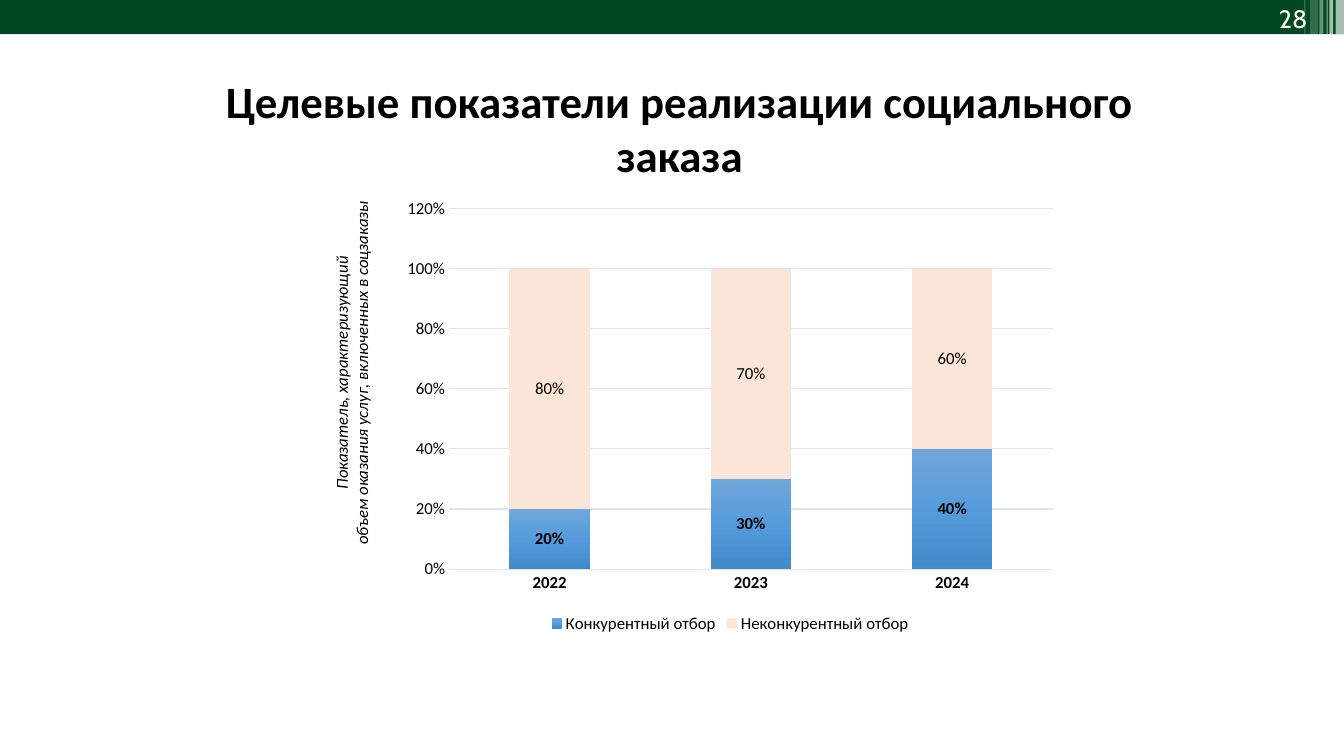
from copy import deepcopy
from dataclasses import dataclass

from pptx import Presentation
from pptx.chart.data import CategoryChartData
from pptx.dml.color import RGBColor
from pptx.enum.chart import XL_CHART_TYPE as ChartType
from pptx.enum.chart import XL_LABEL_POSITION as LabelPos
from pptx.enum.chart import XL_LEGEND_POSITION as LegendPos
from pptx.enum.chart import XL_TICK_MARK as Tick
from pptx.enum.shapes import MSO_SHAPE as Shape
from pptx.enum.text import MSO_ANCHOR as Anchor
from pptx.enum.text import PP_ALIGN as Align
from pptx.oxml.ns import qn
from pptx.util import Cm, Pt


@dataclass(frozen=True)
class Theme:
    green: str = "004821"
    white: str = "FFFFFF"
    black: str = "000000"
    grid: str = "E0E5EB"
    competitive: tuple = ("71A6DB", "559BDB", "448ACA")
    noncompetitive: str = "FBE5D6"
    font: str = "Calibri"
    number_font: str = "Cabin"
    title: int = 32
    number: int = 18
    body: int = 12


THEME = Theme()
SLIDE_W, SLIDE_H, BAR_H = 33.87, 19.05, 0.86
STRIPES = [
    (33.66, 0.21, 0.86, 65),
    (33.5, 0.1, 0.86, 65),
    (33.43, 0.03, 0.86, 60),
    (33.25, 0.1, 0.86, 40),
    (33.02, 0.2, 0.91, 20),
    (32.87, 0.03, 0.91, 30),
]


def rgb(color):
    return RGBColor.from_string(color)


def style_font(font, size=THEME.body, color=THEME.black, name=THEME.font,
               bold=False, italic=False):
    font.size = Pt(size)
    font.color.rgb = rgb(color)
    font.name = name
    font.bold = bold
    font.italic = italic


def add_rect(slide, left, width, height, color, opacity=100):
    sp = slide.shapes.add_shape(Shape.RECTANGLE, Cm(left), 0, Cm(width), Cm(height))
    sp.shadow.inherit = False
    sp.line.fill.background()
    sp.fill.solid()
    sp.fill.fore_color.rgb = rgb(color)
    if opacity < 100:
        clr = sp.fill._xPr.find(qn("a:solidFill"))[0]
        alpha = clr.makeelement(qn("a:alpha"), {"val": str(opacity * 1000)})
        clr.append(alpha)


def add_text(slide, text, left, top, width, height, align=Align.CENTER,
             anchor=Anchor.TOP, rotation=0, **font):
    sp = slide.shapes.add_textbox(Cm(left), Cm(top), Cm(width), Cm(height))
    sp.rotation = rotation
    tf = sp.text_frame
    tf.word_wrap = True
    tf.vertical_anchor = anchor
    tf.text = text
    for p in tf.paragraphs:
        p.alignment = align
        for r in p.runs:
            style_font(r.font, **font)


def fill_gradient(fill, colors):
    fill.gradient()
    fill.gradient_angle = 270
    stops = fill._xPr.find(qn("a:gradFill")).find(qn("a:gsLst"))
    stops.insert(1, deepcopy(stops[0]))
    for i, (stop, color) in enumerate(zip(fill.gradient_stops, colors)):
        stop.color.rgb = rgb(color)
        stop.position = i / (len(colors) - 1)


def style_line(line):
    line.color.rgb = rgb(THEME.grid)
    line.width = Pt(0.75)


def style_axes(chart):
    years, shares = chart.category_axis, chart.value_axis
    for axis in (years, shares):
        axis.major_tick_mark = axis.minor_tick_mark = Tick.NONE
        style_font(axis.tick_labels.font, bold=axis is years)
    style_line(years.format.line)
    style_line(shares.major_gridlines.format.line)
    shares.format.line.fill.background()
    shares.minimum_scale, shares.maximum_scale, shares.major_unit = 0, 1.2, 0.2
    shares.tick_labels.number_format = "0%"
    shares.tick_labels.number_format_is_linked = False


def add_chart(slide, left, top, width, height):
    data = CategoryChartData(number_format="0%")
    data.categories = ["2022", "2023", "2024"]
    data.add_series("Конкурентный отбор", [0.2, 0.3, 0.4])
    data.add_series("Неконкурентный отбор", [0.8, 0.7, 0.6])
    chart = slide.shapes.add_chart(ChartType.COLUMN_STACKED, Cm(left), Cm(top),
                                   Cm(width), Cm(height), data).chart
    style_font(chart.font)
    chart.has_title = False
    chart.has_legend = True
    chart.legend.position = LegendPos.BOTTOM
    chart.legend.include_in_layout = False
    style_font(chart.legend.font)
    style_axes(chart)

    plot = chart.plots[0]
    plot.gap_width, plot.overlap = 150, 100
    plot.vary_by_categories = False
    competitive, noncompetitive = plot.series
    fill_gradient(competitive.format.fill, THEME.competitive)
    noncompetitive.format.fill.solid()
    noncompetitive.format.fill.fore_color.rgb = rgb(THEME.noncompetitive)
    for series in plot.series:
        labels = series.data_labels
        labels.show_value = True
        labels.position = LabelPos.CENTER
        style_font(labels.font, bold=series.name == competitive.name)


def main():
    prs = Presentation()
    prs.slide_width, prs.slide_height = Cm(SLIDE_W), Cm(SLIDE_H)
    s = prs.slides.add_slide(prs.slide_layouts[6])

    add_rect(s, 0, SLIDE_W, BAR_H, THEME.green)
    for left, width, height, opacity in STRIPES:
        add_rect(s, left, width, height, THEME.white, opacity)
    add_text(s, "28", 30.15, 0, 3.05, 0.94, align=Align.RIGHT, anchor=Anchor.MIDDLE,
             size=THEME.number, color=THEME.white, name=THEME.number_font)

    add_text(s, "Целевые показатели реализации социального заказа",
             5.33, 1.73, 23.6, 3, size=THEME.title, bold=True)
    add_chart(s, 9.93, 4.78, 16.94, 11.28)
    add_text(s, "Показатель, характеризующий\nобъем оказания услуг, включенных в соцзаказы",
             2.16, 8.76, 13.39, 1.27, rotation=270, italic=True)
    prs.save("out.pptx")


if __name__ == "__main__":
    main()
